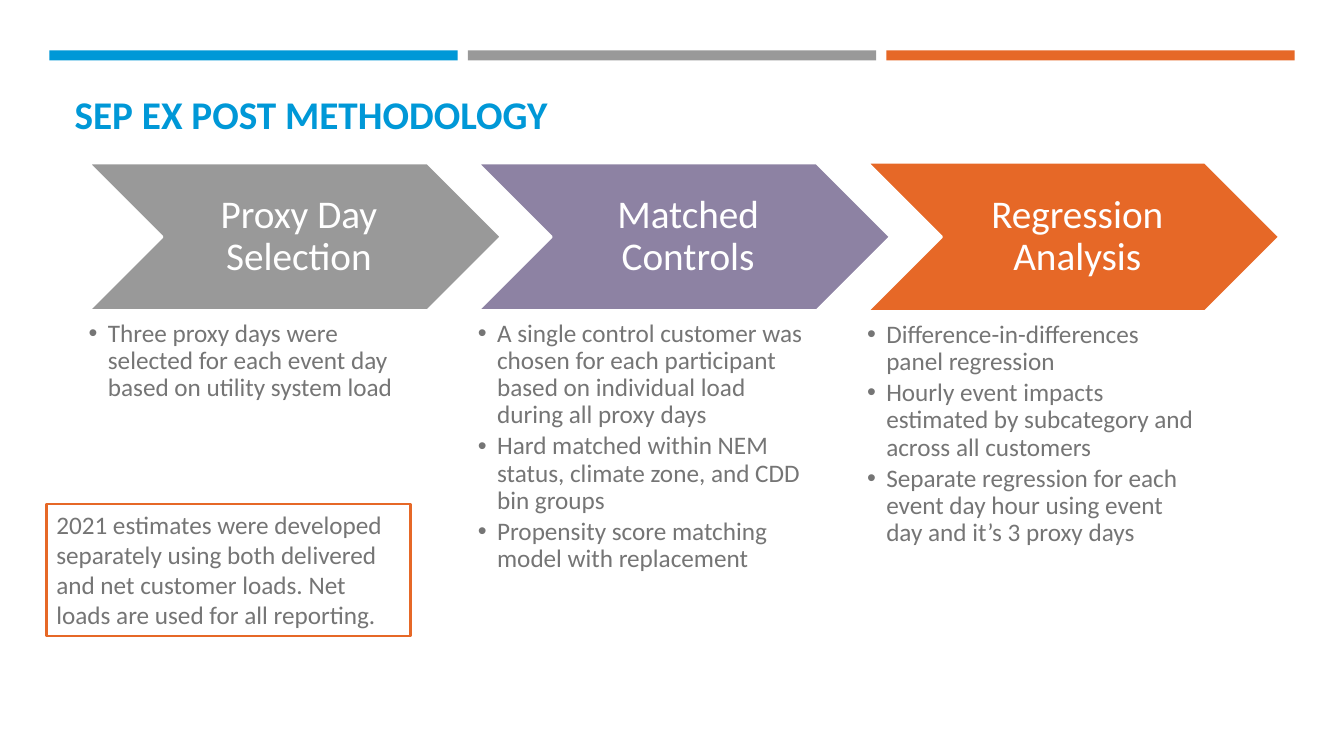
import pptx
import pptx.util
import pptx.dml.color
import pptx.enum.shapes
import pptx.enum.text
import lxml.etree

COLOURS = {
    "blue": "0098D7",
    "orange": "E66827",
    "grey": "999999",
    "purple": "8D82A3",
    "text": "757575",
    "white": "FFFFFF",
}
ANCHOR = pptx.enum.text.MSO_ANCHOR
ALIGN = pptx.enum.text.PP_ALIGN
SHAPE = pptx.enum.shapes.MSO_SHAPE


class MethodologySlide:
    font_name = "Calibri"
    scale = 9144

    def __init__(self, width, height):
        self.deck = pptx.Presentation()
        self.deck.slide_width = self.px(width)
        self.deck.slide_height = self.px(height)
        self.slide = self.deck.slides.add_slide(self.deck.slide_layouts[4])

    def px(self, length):
        return pptx.util.Emu(length * self.scale)

    def colour(self, name):
        return pptx.dml.color.RGBColor.from_string(COLOURS[name])

    def move(self, shape, box):
        shape.left, shape.top, shape.width, shape.height = map(self.px, box)

    def frame(self, shape, anchor, insets):
        frame = shape.text_frame
        frame.word_wrap = True
        frame.auto_size = pptx.enum.text.MSO_AUTO_SIZE.NONE
        frame.vertical_anchor = anchor
        (frame.margin_left, frame.margin_top,
         frame.margin_right, frame.margin_bottom) = map(self.px, insets)
        return frame

    def style(self, paragraph, size, colour, align=ALIGN.LEFT, bold=False, spacing=1.0, after=0):
        paragraph.alignment = align
        paragraph.line_spacing = spacing
        paragraph.space_before = pptx.util.Pt(0)
        paragraph.space_after = pptx.util.Pt(after)
        paragraph.font.name = self.font_name
        paragraph.font.size = pptx.util.Pt(size)
        paragraph.font.bold = bold
        paragraph.font.color.rgb = self.colour(colour)

    def shape(self, kind, box, fill, line=None):
        shape = self.slide.shapes.add_shape(kind, *map(self.px, box))
        shape.shadow.inherit = False
        shape.fill.solid()
        shape.fill.fore_color.rgb = self.colour(fill)
        if line:
            shape.line.color.rgb = self.colour(line)
            shape.line.width = pptx.util.Pt(1.75)
        else:
            shape.line.fill.background()
        return shape

    def title(self, text, box):
        title = self.slide.shapes.title
        self.move(title, box)
        heading = self.frame(title, ANCHOR.BOTTOM, (10, 5, 10, 5)).paragraphs[0]
        heading.text = text
        self.style(heading, 28, "blue", bold=True)

    def step(self, text, box, fill):
        chevron = self.shape(SHAPE.CHEVRON, box, fill, "white")
        label = self.frame(chevron, ANCHOR.MIDDLE, (12, 4, 4, 4)).paragraphs[0]
        label.text = text
        self.style(label, 28, "white", align=ALIGN.CENTER, spacing=0.9)

    def bullets(self, placeholder_index, items, box):
        body = self.slide.placeholders[placeholder_index]
        self.move(body, box)
        frame = self.frame(body, ANCHOR.TOP, (0, 0, 0, 0))
        for number, item in enumerate(items):
            paragraph = frame.add_paragraph() if number else frame.paragraphs[0]
            paragraph.text = item
            properties = paragraph._p.get_or_add_pPr()
            properties.set("marL", str(self.px(19)))
            properties.set("indent", str(self.px(-19)))
            bullet = lxml.etree.SubElement(properties, pptx.oxml.ns.qn("a:buChar"))
            bullet.set("char", "•")
            self.style(paragraph, 18, "text", spacing=0.9, after=2.7)

    def note(self, text, box):
        panel = self.shape(SHAPE.RECTANGLE, box, "white", "orange")
        remark = self.frame(panel, ANCHOR.TOP, (10, 5, 10, 5)).paragraphs[0]
        remark.text = text
        self.style(remark, 18, "text")

    def save(self):
        for placeholder in list(self.slide.placeholders):
            if not placeholder.text_frame.text:
                placeholder.element.getparent().remove(placeholder.element)
        self.deck.save("out.pptx")


STEPS = [
    ("Proxy Day Selection", "grey", 162, 146, [
        "Three proxy days were selected for each event day based on utility system load",
    ]),
    ("Matched Controls", "purple", 162, 146, [
        "A single control customer was chosen for each participant based on "
        "individual load during all proxy days",
        "Hard matched within NEM status, climate zone, and CDD bin groups",
        "Propensity score matching model with replacement",
    ]),
    ("Regression Analysis", "orange", 161, 148, [
        "Difference-in-differences panel regression",
        "Hourly event impacts estimated by subcategory and across all customers",
        "Separate regression for each event day hour using event day and it’s 3 proxy days",
    ]),
]


def main():
    page = MethodologySlide(1333, 750)
    for column, band in enumerate(("blue", "grey", "orange")):
        page.shape(SHAPE.RECTANGLE, (49 + 415 * column, 50, 405, 10), band)
    page.title("SEP EX POST METHODOLOGY", (64, 77, 1206, 64))
    for column, (name, fill, top, height, points) in enumerate(STEPS):
        left = 88 + 386 * column
        page.step(name, (left, top, 409, height), fill)
        page.bullets(column + 1, points, (left, top + height + 10, 328, 260))
    page.note(
        "2021 estimates were developed separately using both delivered and net "
        "customer loads. Net loads are used for all reporting.",
        (46, 500, 361, 131),
    )
    page.save()


if __name__ == "__main__":
    main()
